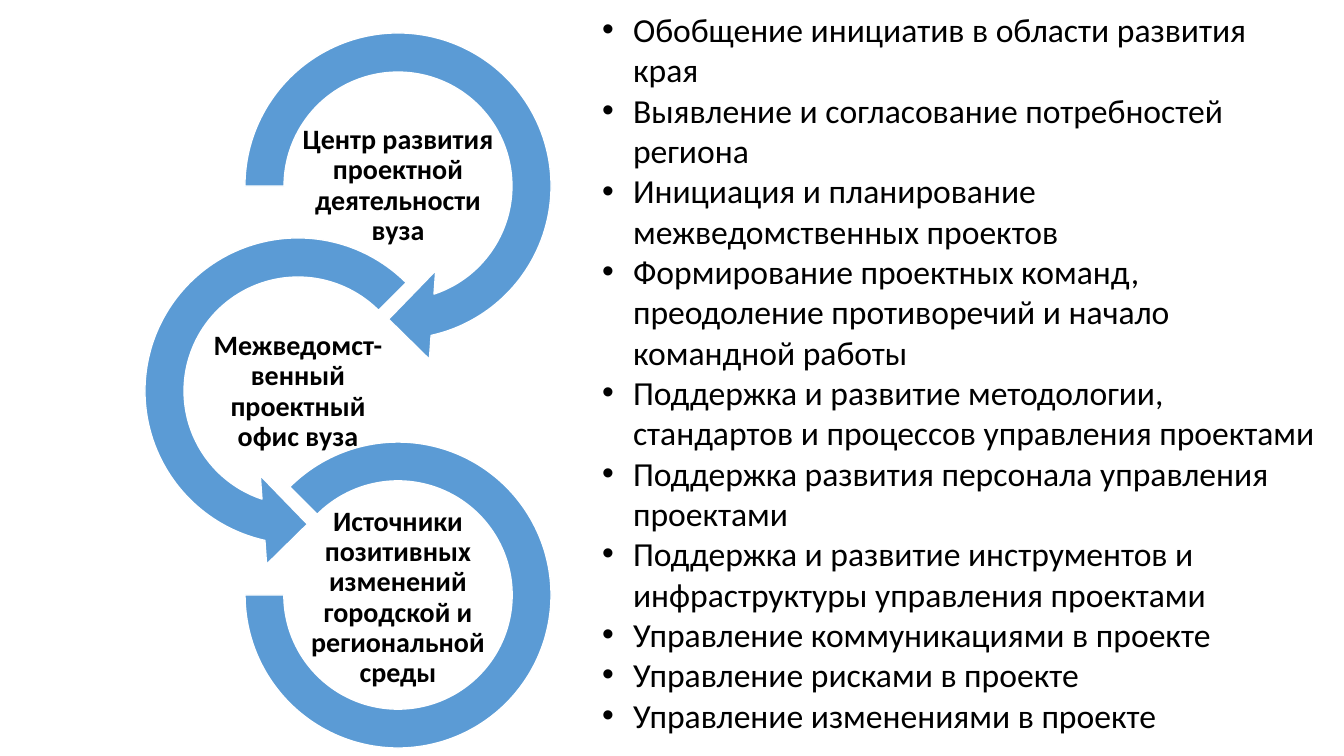
"""Builds a slide with a chain of three project stages and a list of office functions."""
from dataclasses import dataclass

from lxml.etree import SubElement
from pptx import Presentation
from pptx.dml.color import RGBColor
from pptx.enum.shapes import MSO_SHAPE as Preset
from pptx.enum.text import MSO_ANCHOR as Anchor, MSO_AUTO_SIZE as AutoSize, PP_ALIGN as Align
from pptx.oxml.ns import qn
from pptx.util import Pt

WIDTH, HEIGHT = 1344, 756
EMU_PER_PX = 12192000 / WIDTH


def px(length):
    """Turn slide pixels into EMU."""
    return round(length * EMU_PER_PX)


@dataclass(frozen=True)
class Theme:
    """Colours, font and type sizes of the slide."""
    ring: RGBColor = RGBColor.from_string("5B9BD5")
    outline: RGBColor = RGBColor.from_string("FFFFFF")
    ink: RGBColor = RGBColor.from_string("000000")
    font: str = "Calibri"
    label_size: int = 20
    list_size: int = 24


class SlideBuilder:
    """Draws styled elements on one slide."""

    def __init__(self, slide, theme):
        """Keep the slide and its theme."""
        self.slide = slide
        self.theme = theme

    def add_run(self, paragraph, wording, size, bold=False):
        """Add one styled run to a paragraph."""
        run = paragraph.add_run()
        run.text = wording
        run.font.name = self.theme.font
        run.font.size = Pt(size)
        run.font.bold = bold
        run.font.color.rgb = self.theme.ink

    def add_ring(self, preset, center_x, center_y, size, adjustments):
        """Add a circular arrow or arc around a centre."""
        ring = self.slide.shapes.add_shape(
            preset, px(center_x - size // 2), px(center_y - size // 2), px(size), px(size))
        for index, value in enumerate(adjustments):
            ring.adjustments[index] = value
        ring.shadow.inherit = False
        ring.fill.solid()
        ring.fill.fore_color.rgb = self.theme.ring
        ring.line.color.rgb = self.theme.outline
        ring.line.width = Pt(1)

    def add_label(self, wording, center_x, center_y, width=198, height=98):
        """Add a bold centred label inside a ring."""
        label = self.slide.shapes.add_textbox(
            px(center_x - width // 2), px(center_y - height // 2), px(width), px(height))
        frame = label.text_frame
        frame.word_wrap = True
        frame.vertical_anchor = Anchor.MIDDLE
        frame.margin_left = frame.margin_right = frame.margin_top = frame.margin_bottom = px(1)
        paragraph = frame.paragraphs[0]
        paragraph.alignment = Align.CENTER
        paragraph.line_spacing = 0.9
        self.add_run(paragraph, wording, self.theme.label_size, bold=True)

    def fill_list(self, items, left, top, width, height, indent=31):
        """Fill the body placeholder with a bulleted list."""
        body = self.slide.placeholders[1]
        body.left, body.top, body.width, body.height = map(px, (left, top, width, height))
        frame = body.text_frame
        frame.word_wrap = True
        frame.auto_size = AutoSize.NONE
        frame.vertical_anchor = Anchor.TOP
        for index, item in enumerate(items):
            paragraph = frame.add_paragraph() if index else frame.paragraphs[0]
            paragraph.alignment = Align.LEFT
            paragraph.space_before = paragraph.space_after = Pt(0)
            properties = paragraph._p.get_or_add_pPr()
            properties.set("marL", str(px(indent)))
            properties.set("indent", str(-px(indent)))
            SubElement(properties, qn("a:buFont")).set("typeface", "Arial")
            SubElement(properties, qn("a:buChar")).set("char", "•")
            self.add_run(paragraph, item, self.theme.list_size)

    def drop_title(self):
        """Remove the unused title placeholder."""
        title = self.slide.shapes.title.element
        title.getparent().remove(title)


STAGES = [
    ("Центр развития проектной деятельности вуза",
     Preset.CIRCULAR_ARROW, 398, 186, 356, (0.11, 11.42, 45, 108, 0.125)),
    ("Межведомст-венный проектный офис вуза",
     Preset.LEFT_CIRCULAR_ARROW, 298, 391, 356, (0.11, 11.42, 63, 189, 0.125)),
    ("Источники позитивных изменений городской и региональной среды",
     Preset.BLOCK_ARC, 398, 595, 306, (135, 108, 0.127)),
]
LABEL_TOP_CENTER, LABEL_STEP = 186, 206

FUNCTIONS = [
    "Обобщение инициатив в области развития края",
    "Выявление и согласование потребностей региона",
    "Инициация и планирование межведомственных проектов",
    "Формирование проектных команд, преодоление противоречий и начало командной работы",
    "Поддержка и развитие методологии, стандартов и процессов управления проектами",
    "Поддержка развития персонала управления проектами",
    "Поддержка и развитие инструментов и инфраструктуры управления проектами",
    "Управление коммуникациями в проекте",
    "Управление рисками в проекте",
    "Управление изменениями в проекте",
]


def main():
    """Build and save the presentation."""
    deck = Presentation()
    deck.slide_width, deck.slide_height = px(WIDTH), px(HEIGHT)
    builder = SlideBuilder(deck.slides.add_slide(deck.slide_layouts[1]), Theme())
    builder.drop_title()
    for index, (wording, preset, center_x, center_y, size, adjustments) in enumerate(STAGES):
        builder.add_ring(preset, center_x, center_y, size, adjustments)
        builder.add_label(wording, center_x, LABEL_TOP_CENTER + index * LABEL_STEP)
    builder.fill_list(FUNCTIONS, left=592, top=4, width=735, height=748)
    deck.save("out.pptx")


if __name__ == "__main__":
    main()
